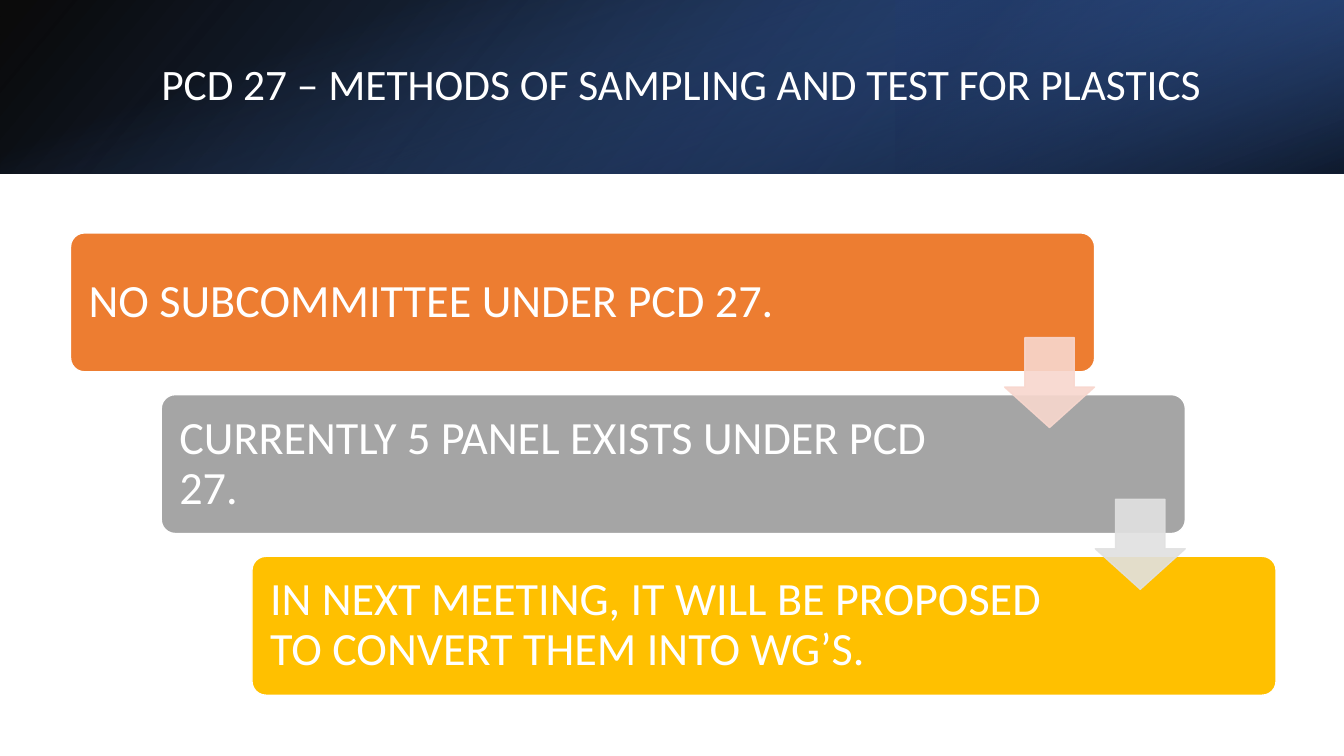
from lxml.etree import SubElement
from pptx import Presentation
from pptx.dml.color import RGBColor
from pptx.enum.shapes import MSO_SHAPE
from pptx.enum.text import MSO_ANCHOR, MSO_AUTO_SIZE, PP_ALIGN
from pptx.oxml.ns import qn
from pptx.util import Pt

TITLE = "PCD 27 – METHODS OF SAMPLING AND TEST FOR PLASTICS"
WHITE = "FFFFFF"
STEPS = [
    ("NO SUBCOMMITTEE UNDER PCD 27.", "ED7D31", 624.2),
    ("CURRENTLY 5 PANEL EXISTS UNDER PCD 27.", "A5A5A5", 596.9),
    ("IN NEXT MEETING, IT WILL BE PROPOSED TO CONVERT THEM INTO WG’S.", "FFC000", 596.9),
]
ARROW_COLORS = ["F8D7CE", "E1E1E1"]
PAGE_WIDTH, PAGE_HEIGHT, BANNER_HEIGHT = 960, 540, 124
BANNER_LAYERS = [
    ((0, 0, PAGE_WIDTH, BANNER_HEIGHT), 0, True, 140,
     [(0, "000000", 96), (100, "2F5597", 100)]),
    ((640, 0, 320, BANNER_HEIGHT), 180, True, 320,
     [(19, "203864", 68), (100, "4472C4", 79)]),
    ((418, -418, BANNER_HEIGHT, PAGE_WIDTH), 90, False, 340,
     [(23, "4472C4", 0), (99, "000000", 74)]),
]
CARD_LEFT, CARD_TOP, CARD_WIDTH, CARD_HEIGHT = 50.4, 166.4, 731.5, 99.2
STEP_X, STEP_Y = 64.8, 115.5
LABEL_OFFSET, LABEL_INSET = 2.9, 10
ARROW_LEFT, ARROW_TOP, ARROW_SIZE = 717.6, 241.2, 64.2


def color(value):
    return RGBColor.from_string(value)


def add_shape(page, kind, bounds, adjustments=()):
    shape = page.shapes.add_shape(kind, *[Pt(length) for length in bounds])
    shape.shadow.inherit = False
    for index, value in enumerate(adjustments):
        shape.adjustments[index] = value
    return shape


def paint(shape, fill, line):
    shape.fill.solid()
    shape.fill.fore_color.rgb = color(fill)
    shape.line.color.rgb = color(line)
    shape.line.width = Pt(1)


def add_alpha(color_element, percent):
    SubElement(color_element, qn("a:alpha"), val=str(percent * 1000))


def add_banner_layer(page, bounds, rotation, flipped, angle, stops):
    layer = add_shape(page, MSO_SHAPE.RECTANGLE, bounds)
    layer.rotation = rotation
    layer.line.fill.background()
    layer.fill.gradient()
    properties = layer._element.spPr
    if flipped:
        properties.find(qn("a:xfrm")).set("flipH", "1")
    gradient = properties.find(qn("a:gradFill"))
    for child in list(gradient):
        gradient.remove(child)
    stop_list = SubElement(gradient, qn("a:gsLst"))
    for position, value, opacity in stops:
        stop = SubElement(stop_list, qn("a:gs"), pos=str(position * 1000))
        add_alpha(SubElement(stop, qn("a:srgbClr"), val=value), opacity)
    SubElement(gradient, qn("a:lin"), ang=str(angle * 60000), scaled="0")


def write_text(box, text, size, inset_x, inset_y):
    frame = box.text_frame
    frame.word_wrap = True
    frame.auto_size = MSO_AUTO_SIZE.NONE
    frame.vertical_anchor = MSO_ANCHOR.MIDDLE
    frame.margin_left = frame.margin_right = Pt(inset_x)
    frame.margin_top = frame.margin_bottom = Pt(inset_y)
    para = frame.paragraphs[0]
    para.alignment = PP_ALIGN.LEFT
    para.line_spacing = 0.9
    span = para.add_run()
    span.text = text
    span.font.name = "Calibri"
    span.font.size = Pt(size)
    span.font.color.rgb = color(WHITE)


def add_title(page):
    title = page.shapes.title
    title.left, title.top, title.width, title.height = Pt(108), Pt(27.4), Pt(790.6), Pt(69)
    write_text(title, TITLE, size=31, inset_x=7.2, inset_y=3.6)
    page.shapes._spTree.append(title._element)


def add_step(page, index, text, fill, label_width):
    left, top = CARD_LEFT + index * STEP_X, CARD_TOP + index * STEP_Y
    card = add_shape(page, MSO_SHAPE.ROUNDED_RECTANGLE,
                     (left, top, CARD_WIDTH, CARD_HEIGHT), [0.1])
    paint(card, fill, WHITE)
    label = page.shapes.add_textbox(Pt(left + LABEL_OFFSET), Pt(top + LABEL_OFFSET),
                                    Pt(label_width), Pt(CARD_HEIGHT - 2 * LABEL_OFFSET))
    write_text(label, text, size=33, inset_x=LABEL_INSET, inset_y=LABEL_INSET)


def add_arrow(page, index, fill):
    arrow = add_shape(page, MSO_SHAPE.DOWN_ARROW,
                      (ARROW_LEFT + index * STEP_X, ARROW_TOP + index * STEP_Y,
                       ARROW_SIZE, ARROW_SIZE))
    arrow.adjustments[0] = 0.55
    arrow.adjustments[1] = 0.45
    paint(arrow, fill, fill)
    for color_element in arrow._element.spPr.iter(qn("a:srgbClr")):
        add_alpha(color_element, 90)


def main():
    deck = Presentation()
    deck.slide_width, deck.slide_height = Pt(PAGE_WIDTH), Pt(PAGE_HEIGHT)
    page = deck.slides.add_slide(deck.slide_layouts[5])
    for layer in BANNER_LAYERS:
        add_banner_layer(page, *layer)
    add_title(page)
    for index, step in enumerate(STEPS):
        add_step(page, index, *step)
    for index, fill in enumerate(ARROW_COLORS):
        add_arrow(page, index, fill)
    deck.save("out.pptx")


if __name__ == "__main__":
    main()
